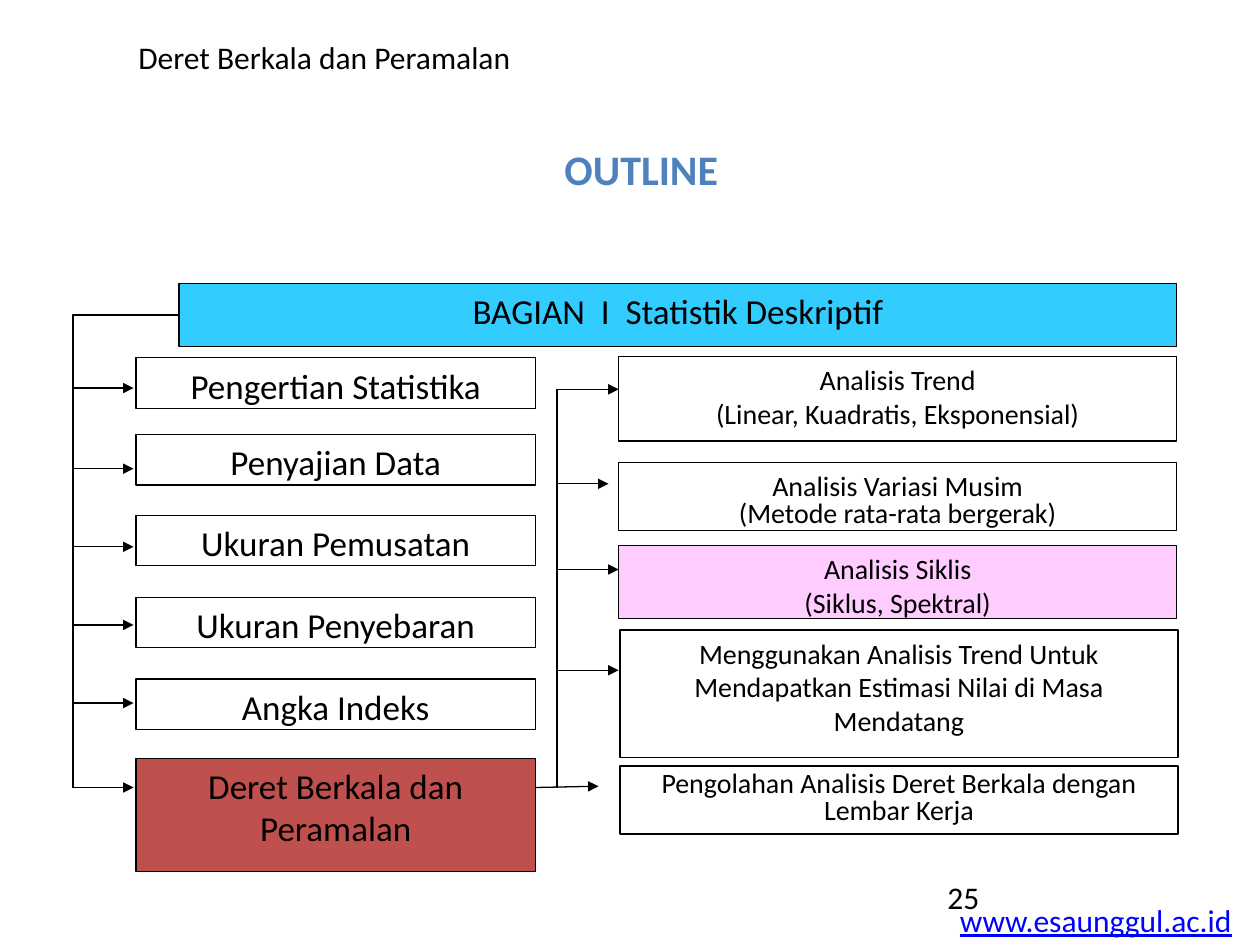
"""Build the outline slide for the time series and forecasting chapter."""
import pptx
import pptx.dml.color
import pptx.enum.shapes
import pptx.enum.text
import pptx.oxml.ns
import pptx.util
from lxml import etree

Inches = pptx.util.Inches
RGBColor = pptx.dml.color.RGBColor
ALIGN = pptx.enum.text.PP_ALIGN
ANCHOR = pptx.enum.text.MSO_ANCHOR
qn = pptx.oxml.ns.qn

BLACK = RGBColor(0x00, 0x00, 0x00)
TITLE_BLUE = RGBColor(0x4F, 0x81, 0xBD)
LINK_BLUE = RGBColor(0x00, 0x00, 0xFF)
CYAN = RGBColor(0x33, 0xCC, 0xFF)
RED = RGBColor(0xC0, 0x50, 0x4D)
PINK = RGBColor(0xFF, 0xCC, 0xFF)

prs = pptx.Presentation()
prs.slide_width, prs.slide_height = Inches(10), Inches(7.5)
s = prs.slides.add_slide(prs.slide_layouts[6])


def write(sp, lines, size, align, anchor=ANCHOR.TOP, wrap=True, color=BLACK, **extra):
    tf = sp.text_frame
    tf.word_wrap = wrap
    tf.vertical_anchor = anchor
    for i, (text, spacing) in enumerate(lines):
        p = tf.paragraphs[0] if i == 0 else tf.add_paragraph()
        p.alignment = align
        p.line_spacing = spacing
        r = p.add_run()
        r.text = text
        r.font.color.rgb = color
        for name, value in {"name": "Calibri", "size": pptx.util.Pt(size), **extra}.items():
            setattr(r.font, name, value)


def connect(x1, y1, x2, y2, arrow=True):
    sp = s.shapes.add_connector(pptx.enum.shapes.MSO_CONNECTOR.STRAIGHT,
                                Inches(x1), Inches(y1), Inches(x2), Inches(y2))
    sp.line.color.rgb = BLACK
    sp.line.width = pptx.util.Pt(0.75)
    if arrow:
        etree.SubElement(sp.line._get_or_add_ln(), qn("a:tailEnd"), type="triangle")
    etree.SubElement(sp._element.spPr, qn("a:effectLst"))


texts = [
    ((7.52, 7.1, 2.38, 0.4), "www.esaunggul.ac.id", 18, ALIGN.LEFT,
     {"wrap": False, "color": LINK_BLUE, "underline": True}),
    ((7.42, 6.92, 2.08, 0.5), "25", 18, ALIGN.LEFT, {}),
    ((0.83, 1.08, 8.52, 0.51), "OUTLINE", 24, ALIGN.CENTER,
     {"anchor": ANCHOR.MIDDLE, "color": TITLE_BLUE, "bold": True}),
    ((1, 0.25, 7.92, 0.4), "Deret Berkala dan Peramalan", 18, ALIGN.LEFT, {}),
]
for box, text, size, align, extra in texts:
    sp = s.shapes.add_textbox(*map(Inches, box))
    write(sp, [(text, None)], size, align, **extra)

chapters = [
    (2.84, 0.4, None, ["Pengertian Statistika"]),
    (3.45, 0.4, None, ["Penyajian Data"]),
    (4.09, 0.4, None, ["Ukuran Pemusatan"]),
    (4.74, 0.4, None, ["Ukuran Penyebaran"]),
    (5.39, 0.4, None, ["Angka Indeks"]),
    (6.02, 0.9, RED, ["Deret Berkala dan", "Peramalan"]),
]
topics = [
    (4.91, 2.83, 0.67, None, [("Analisis Trend", None),
                              ("(Linear, Kuadratis, Eksponensial)", None)]),
    (4.91, 3.67, 0.54, None, [("Analisis Variasi Musim", None),
                              ("(Metode rata-rata bergerak)", 0.8)]),
    (4.91, 4.33, 0.58, PINK, [("Analisis Siklis", None), ("(Siklus, Spektral)", None)]),
    (4.92, 5, 1.01, None, [("Menggunakan Analisis Trend Untuk Mendapatkan "
                            "Estimasi Nilai di Masa Mendatang", None)]),
    (4.92, 6.08, 0.54, None, [("Pengolahan Analisis Deret Berkala dengan "
                               "Lembar Kerja", 0.8)]),
]
boxes = [((1.42, 2.25, 7.92, 0.5), CYAN, 20, [("BAGIAN  I  Statistik Deskriptif", None)])]
boxes += [((1.08, y, 3.17, h), fill, 20, [(t, None) for t in lines])
          for y, h, fill, lines in chapters]
boxes += [((x, y, 4.43, h), fill, 16, lines) for x, y, h, fill, lines in topics]
for box, fill, size, lines in boxes:
    sp = s.shapes.add_shape(pptx.enum.shapes.MSO_SHAPE.RECTANGLE, *map(Inches, box))
    sp.shadow.inherit = False
    if fill is None:
        sp.fill.background()
    else:
        sp.fill.solid()
        sp.fill.fore_color.rgb = fill
    sp.line.color.rgb = BLACK
    sp.line.width = pptx.util.Pt(0.75)
    write(sp, lines, size, ALIGN.CENTER)

fb = s.shapes.build_freeform(Inches(1.42), Inches(2.5))
fb.add_line_segments([(Inches(0.58), Inches(2.5)), (Inches(0.58), Inches(6.25))], close=False)
sp = fb.convert_to_shape()
sp.shadow.inherit = False
sp.fill.background()
sp.line.color.rgb = BLACK
sp.line.width = pptx.util.Pt(0.75)

for y in (3.08, 3.72, 4.34, 4.96, 5.58, 6.25):
    connect(0.58, y, 1.06, y)
connect(4.42, 3.09, 4.42, 6.25, arrow=False)
for y, end in ((3.09, 4.91), (3.84, 4.83), (4.52, 4.91), (5.32, 4.91)):
    connect(4.43, y, end, y)
connect(4.25, 6.25, 4.75, 6.24)

prs.save("out.pptx")
